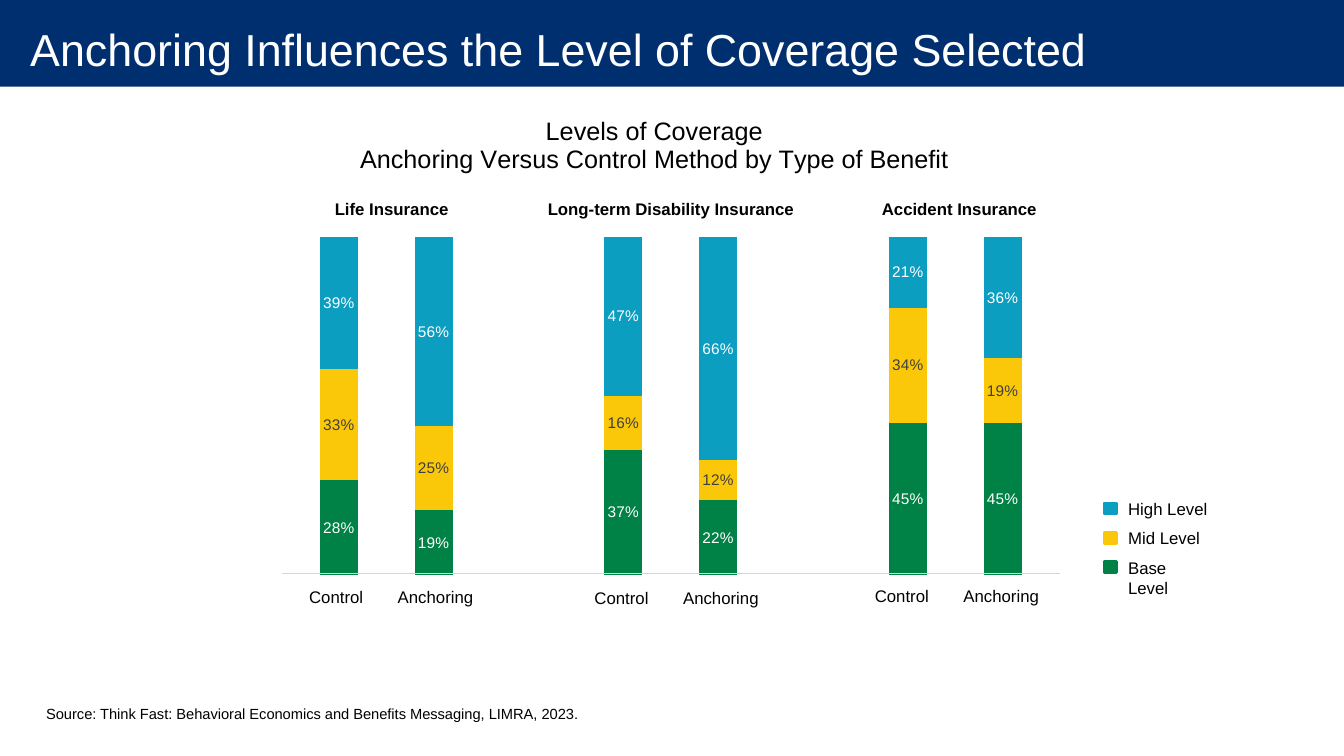
"""Build a slide with stacked columns of coverage levels by benefit and method."""
from lxml import etree
from pptx import Presentation
from pptx.chart.data import CategoryChartData
from pptx.dml.color import RGBColor
from pptx.enum.chart import XL_CHART_TYPE, XL_LABEL_POSITION
from pptx.enum.shapes import MSO_CONNECTOR, MSO_SHAPE
from pptx.enum.text import MSO_ANCHOR, PP_ALIGN
from pptx.oxml.ns import qn
from pptx.util import Inches, Pt

STACKED = XL_CHART_TYPE.COLUMN_STACKED
LABEL_CENTER = XL_LABEL_POSITION.CENTER
RECTANGLE = MSO_SHAPE.RECTANGLE
STRAIGHT = MSO_CONNECTOR.STRAIGHT
MIDDLE = MSO_ANCHOR.MIDDLE
LEFT, CENTER = PP_ALIGN.LEFT, PP_ALIGN.CENTER

FONT = "Arial"
NAVY, WHITE, BLACK, RULE = "002F70", "FFFFFF", "000000", "D8D5D5"
WIDTH, HEIGHT = 13.33, 7.5
LEVELS = [
    ("Base Level", "008145", WHITE, [0.28, 0.19, None, 0.37, 0.22, None, 0.45, 0.45]),
    ("Mid Level", "FAC809", "404040", [0.33, 0.25, None, 0.16, 0.12, None, 0.34, 0.19]),
    ("High Level", "0B9EC1", WHITE, [0.39, 0.56, None, 0.47, 0.66, None, 0.21, 0.36]),
]
BENEFITS = [
    ("Life Insurance", 2.83, 2.11, 2.93, 5.77),
    ("Long-term Disability Insurance", 5.31, 2.69, 5.76, 5.78),
    ("Accident Insurance", 8.63, 1.77, 8.54, 5.76),
]


def paint(target, color):
    """Set a solid colour on a fill or a font."""
    if hasattr(target, "solid"):
        target.solid()
        target.fore_color.rgb = RGBColor.from_string(color)
    else:
        target.color.rgb = RGBColor.from_string(color)


def add_text(text, left, top, width, height=0.3, size=12, color=BLACK, bold=False, align=LEFT):
    """Add a one-line text box, measured in inches, and return its frame."""
    box = page.shapes.add_textbox(Inches(left), Inches(top), Inches(width), Inches(height))
    frame = box.text_frame
    frame.word_wrap = True
    para = frame.paragraphs[0]
    para.text = text
    para.alignment = align
    para.font.name, para.font.size, para.font.bold = FONT, Pt(size), bold
    paint(para.font, color)
    return frame


deck = Presentation()
deck.slide_width, deck.slide_height = Inches(WIDTH), Inches(HEIGHT)
page = deck.slides.add_slide(deck.slide_layouts[6])

banner = page.shapes.add_shape(RECTANGLE, 0, 0, Inches(WIDTH), Inches(0.86))
banner.shadow.inherit = False
paint(banner.fill, NAVY)
banner.line.fill.background()

source = add_text("Source: Think Fast: Behavioral Economics and Benefits Messaging, LIMRA, 2023.",
                  0.36, 6.94, 5.54, 0.28, size=10.5)
source.word_wrap = False
heading = add_text("Anchoring Influences the Level of Coverage Selected",
                   0, 0, WIDTH, 0.97, size=32, color=WHITE)
heading.vertical_anchor = MIDDLE
heading.margin_left, heading.margin_right = Inches(0.3), Inches(0.2)
heading.margin_top = heading.margin_bottom = 0

data = CategoryChartData(number_format="0%")
data.categories = [str(number) for number in range(1, 9)]
for name, _, _, shares in LEVELS:
    data.add_series(name, shares)
chart = page.shapes.add_chart(STACKED, Inches(2.68), Inches(1.06),
                              Inches(7.83), Inches(5.38), data).chart
chart.has_legend = False
chart.font.name, chart.font.size = FONT, Pt(10)
paint(chart.font, BLACK)

chart.has_title = True
title = chart.chart_title
title.include_in_layout = False
title.text_frame.text = "Levels of Coverage\nAnchoring Versus Control Method by Type of Benefit"
for para in title.text_frame.paragraphs:
    para.alignment = CENTER
    para.font.name, para.font.size, para.font.bold = FONT, Pt(18), False
    paint(para.font, BLACK)

chart.value_axis.minimum_scale, chart.value_axis.maximum_scale = 0, 1.2
chart.value_axis.has_major_gridlines = False
chart.value_axis.visible = chart.category_axis.visible = False

plot = chart.plots[0]
plot.gap_width, plot.overlap, plot.vary_by_categories = 150, 100, False
for series, (_, fill, ink, _) in zip(plot.series, LEVELS):
    paint(series.format.fill, fill)
    labels = series.data_labels
    labels.show_value = True
    labels.position = LABEL_CENTER
    labels.number_format, labels.number_format_is_linked = "0%", False
    labels.font.name, labels.font.size = FONT, Pt(11)
    paint(labels.font, ink)

plot_area = chart.element.find(".//" + qn("c:plotArea"))
title_element = chart.element.find(".//" + qn("c:title"))
placements = [
    (plot_area, 0, [("layoutTarget", "inner"), ("xMode", "edge"), ("yMode", "edge"),
                    ("x", 0.027), ("y", 0.115), ("w", 0.961), ("h", 0.748)]),
    (title_element, 1, [("xMode", "edge"), ("yMode", "edge"), ("x", 0.11), ("y", 0.01)]),
]
for parent, position, settings in placements:
    layout = parent.find(qn("c:layout"))
    if layout is None:
        layout = etree.Element(qn("c:layout"))
        parent.insert(position, layout)
    manual = etree.SubElement(layout, qn("c:manualLayout"))
    for tag, value in settings:
        etree.SubElement(manual, qn("c:" + tag)).set("val", str(value))

for row, (name, fill, _, _) in enumerate(reversed(LEVELS)):
    top = 4.99 + 0.29 * row
    swatch = page.shapes.add_shape(RECTANGLE, Inches(10.95), Inches(top), Inches(0.12), Inches(0.11))
    swatch.shadow.inherit = False
    paint(swatch.fill, fill)
    paint(swatch.line.fill, fill)
    swatch.line.width = Pt(2)
    add_text(name, 11.09, top - 0.09, 1.02)

baseline = page.shapes.add_connector(STRAIGHT, Inches(2.8), Inches(5.69), Inches(10.51), Inches(5.69))
paint(baseline.line.fill, RULE)
baseline.line.width = Pt(0.75)
etree.SubElement(baseline.element.spPr, qn("a:effectLst"))

for benefit, left, width, methods_left, methods_top in BENEFITS:
    add_text(benefit, left, 1.92, width, bold=True, align=CENTER)
    add_text("Control", methods_left, methods_top, 0.81, align=CENTER)
    add_text("Anchoring", methods_left + 0.8, methods_top, 1.18, align=CENTER)

deck.save("out.pptx")
